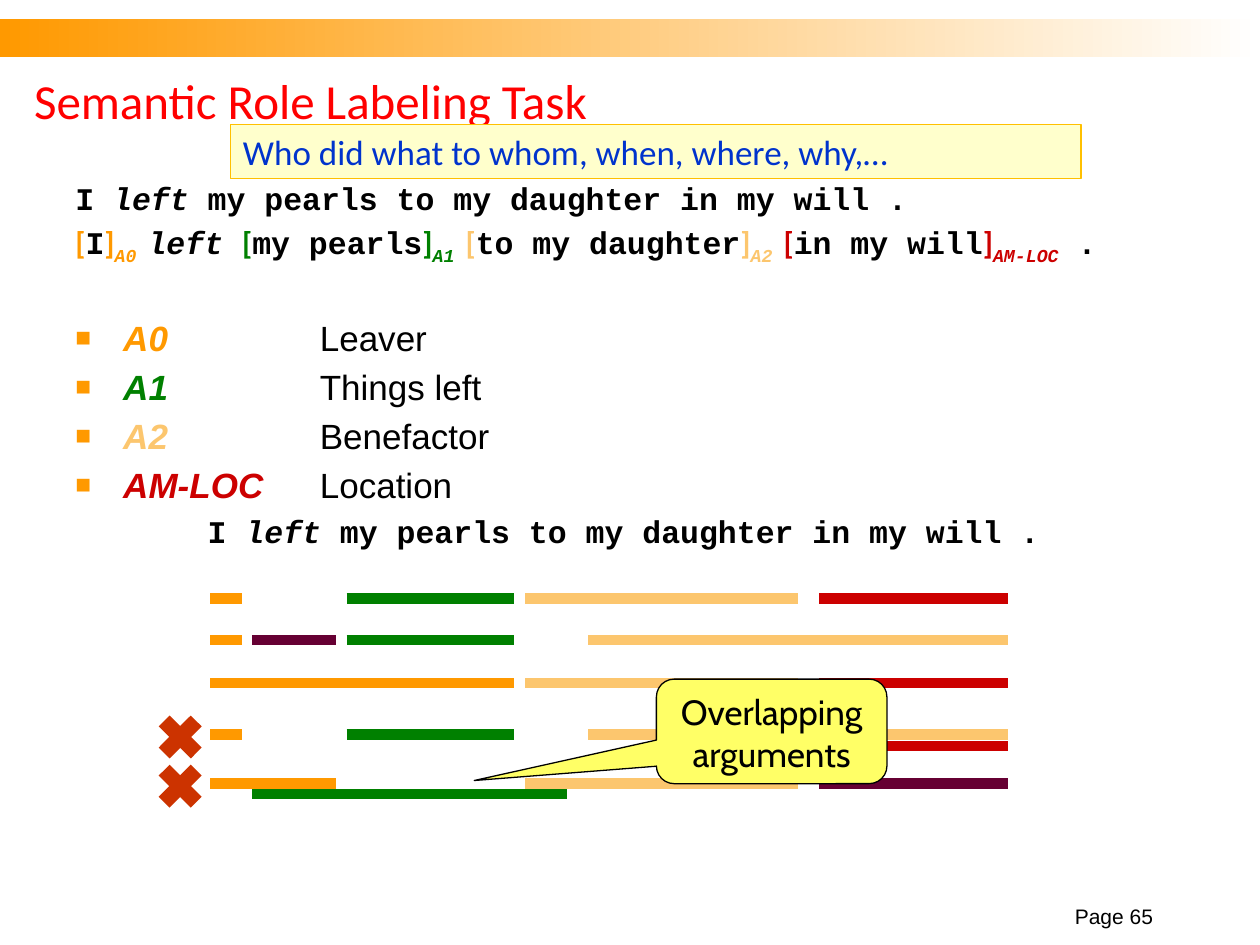
from lxml import etree
from pptx import Presentation
from pptx.dml.color import RGBColor
from pptx.enum import shapes, text
from pptx.oxml import ns
from pptx.util import Inches, Pt

COLORS = {
    "orange": "FF9900", "green": "008000", "peach": "FCC66E", "red": "CC0000",
    "plum": "660033", "cross": "CC3300", "title": "FF0000", "question": "0033CC",
    "cream": "FFFFCC", "gold": "FFC000", "yellow": "FFFF66",
    "black": "000000", "white": "FFFFFF",
}
SENTENCE = [("I ", {}), ("left", {"italic": True}),
            (" my pearls to my daughter in my will .", {})]
# words before the argument, argument, role, colour
ARGUMENTS = [("", "I", "A0", "orange"), ("left ", "my pearls", "A1", "green"),
             ("", "to my daughter", "A2", "peach"), ("", "in my will", "AM-LOC", "red")]
ROLES = [("A0", "Leaver", "orange"), ("A1", "Things left", "green"),
         ("A2", "Benefactor", "peach"), ("AM-LOC", "Location", "red")]
# y, then (start, end, colour) of each candidate argument
CANDIDATES = [
    (4.75, [(1.67, 1.92, "orange"), (2.75, 4.08, "green"),
            (4.17, 6.33, "peach"), (6.5, 8, "red")]),
    (5.08, [(1.67, 1.92, "orange"), (2, 2.67, "plum"), (2.75, 4.08, "green"),
            (4.67, 8, "peach")]),
    (5.42, [(1.67, 4.08, "orange"), (4.17, 6.33, "peach"), (6.5, 8, "red")]),
    (5.83, [(1.67, 1.92, "orange"), (2.75, 4.08, "green"), (4.67, 8, "peach")]),
    (5.92, [(6.5, 8, "red")]),
    (6.22, [(1.67, 2.67, "orange"), (4.17, 6.33, "peach"), (6.5, 8, "plum")]),
    (6.3, [(2, 4.5, "green")]),
]


def rgb(name):
    return RGBColor.from_string(COLORS[name])


class SlideBuilder:
    def __init__(self, slide):
        self.slide = slide

    def run(self, paragraph, words, size, font="Arial", color="black",
            bold=False, italic=False, baseline=None):
        run = paragraph.add_run()
        run.text = words
        run.font.size = Pt(size)
        run.font.name = font
        run.font.bold = bold
        run.font.italic = italic
        run.font.color.rgb = rgb(color)
        if baseline is not None:
            run.font._element.set("baseline", str(baseline * 1000))

    def title(self, words, box):
        title = self.slide.shapes.title
        title.left, title.top, title.width, title.height = map(Inches, box)
        title.text_frame.vertical_anchor = text.MSO_ANCHOR.MIDDLE
        paragraph = title.text_frame.paragraphs[0]
        paragraph.alignment = text.PP_ALIGN.LEFT
        self.run(paragraph, words, 28, "Calibri", "title")

    def text_box(self, box, anchor=text.MSO_ANCHOR.TOP):
        frame = self.slide.shapes.add_textbox(*map(Inches, box)).text_frame
        frame.word_wrap = True
        frame.vertical_anchor = anchor
        return frame

    def shape(self, kind, box, fill=None, line=None):
        shape = self.slide.shapes.add_shape(kind, *map(Inches, box))
        shape.shadow.inherit = False
        if fill:
            shape.fill.solid()
            shape.fill.fore_color.rgb = rgb(fill)
        if line:
            shape.line.color.rgb = rgb(line)
            shape.line.width = Pt(0.75)
        else:
            shape.line.fill.background()
        return shape

    def banner(self, box, start, end):
        fill = self.shape(shapes.MSO_SHAPE.RECTANGLE, box).fill
        fill.gradient()
        fill.gradient_angle = 0
        for stop, color, position in zip(fill.gradient_stops, (start, end), (0, 1)):
            stop.color.rgb = rgb(color)
            stop.position = position

    def label(self, shape, words, font, color, alignment, anchor):
        frame = shape.text_frame
        frame.word_wrap = True
        frame.vertical_anchor = anchor
        frame.paragraphs[0].alignment = alignment
        self.run(frame.paragraphs[0], words, 20, font, color)

    def bar(self, start, end, y, color):
        bar = self.slide.shapes.add_connector(
            shapes.MSO_CONNECTOR.STRAIGHT,
            Inches(start), Inches(y), Inches(end), Inches(y))
        bar.line.color.rgb = rgb(color)
        bar.line.width = Pt(6)
        etree.SubElement(bar._element.spPr, ns.qn("a:effectLst"))

    def cross(self, left, top):
        cross = self.shape(shapes.MSO_SHAPE.CROSS, (left, top, 0.36, 0.36), "cross")
        cross.adjustments[0] = 0.33
        cross.rotation = 45

    def sentence(self, paragraph):
        for words, style in SENTENCE:
            self.run(paragraph, words, 18, "Courier New", bold=True, **style)

    def labeled_sentence(self, paragraph):
        for before, argument, role, color in ARGUMENTS:
            if before:
                self.run(paragraph, before, 18, "Courier New", bold=True, italic=True)
            self.run(paragraph, "[", 18, "Calibri", color, bold=True)
            self.run(paragraph, argument, 18, "Courier New", bold=True)
            self.run(paragraph, "]", 18, "Calibri", color, bold=True)
            gap = "" if role == ARGUMENTS[-1][2] else " "
            self.run(paragraph, role + gap, 18, "Courier New", color,
                     bold=True, italic=True, baseline=-25)
        self.run(paragraph, " .", 18, "Courier New", bold=True)

    def role(self, paragraph, name, meaning, color):
        """Bulleted role name with its meaning at a tab stop."""
        properties = paragraph._p.get_or_add_pPr()
        properties.set("marL", str(Inches(0.38)))
        properties.set("indent", str(-Inches(0.38)))
        bullet_color = etree.SubElement(properties, ns.qn("a:buClr"))
        etree.SubElement(bullet_color, ns.qn("a:srgbClr"), val=COLORS["orange"])
        etree.SubElement(properties, ns.qn("a:buSzPct"), val="75000")
        etree.SubElement(properties, ns.qn("a:buFont"), typeface="Arial")
        etree.SubElement(properties, ns.qn("a:buChar"), char="■")
        tabs = etree.SubElement(properties, ns.qn("a:tabLst"))
        etree.SubElement(tabs, ns.qn("a:tab"), pos=str(Inches(1.94)), algn="l")
        paragraph.space_before = Pt(4)
        self.run(paragraph, name, 20, color=color, bold=True, italic=True)
        self.run(paragraph, "\t" + meaning, 20)


def main():
    presentation = Presentation()
    presentation.slide_width, presentation.slide_height = Inches(10), Inches(7.5)
    slide = presentation.slides.add_slide(presentation.slide_layouts[5])
    builder = SlideBuilder(slide)

    builder.banner((0, 0.15, 10, 0.3), "orange", "white")
    builder.title("Semantic Role Labeling Task", (0.17, 0.5, 9, 0.58))

    body = builder.text_box((0.5, 1.37, 9, 5.38))
    builder.sentence(body.paragraphs[0])
    labeled = body.add_paragraph()
    labeled.space_before = Pt(3.6)
    builder.labeled_sentence(labeled)
    role_paragraphs = [body.add_paragraph() for _ in ROLES]
    for paragraph, role in zip(role_paragraphs, ROLES):
        builder.role(paragraph, *role)
    role_paragraphs[0].space_before = Pt(29)
    repeated = body.add_paragraph()
    repeated.space_before = Pt(3.6)
    repeated._p.get_or_add_pPr().set("marL", str(Inches(1.05)))
    builder.sentence(repeated)

    for y, bars in CANDIDATES:
        for start, end, color in bars:
            builder.bar(start, end, y, color)
    for top in (5.67, 6.06):
        builder.cross(1.25, top)

    callout = builder.shape(shapes.MSO_SHAPE.ROUNDED_RECTANGULAR_CALLOUT,
                            (5.21, 5.39, 1.83, 0.83), "yellow", "black")
    for index, value in enumerate((-1.29, 0.47, 0.17)):
        callout.adjustments[index] = value
    builder.label(callout, "Overlapping arguments", "Cabin", "black",
                  text.PP_ALIGN.CENTER, text.MSO_ANCHOR.TOP)

    question = builder.shape(shapes.MSO_SHAPE.RECTANGLE, (1.83, 0.99, 6.75, 0.43),
                             "cream", "gold")
    builder.label(question, "Who did what to whom, when, where, why,…", "Calibri",
                  "question", text.PP_ALIGN.LEFT, text.MSO_ANCHOR.MIDDLE)

    page = builder.text_box((8.25, 7.17, 1, 0.25), text.MSO_ANCHOR.BOTTOM)
    page.paragraphs[0].alignment = text.PP_ALIGN.RIGHT
    builder.run(page.paragraphs[0], "Page 65", 12)

    presentation.save("out.pptx")


if __name__ == "__main__":
    main()
